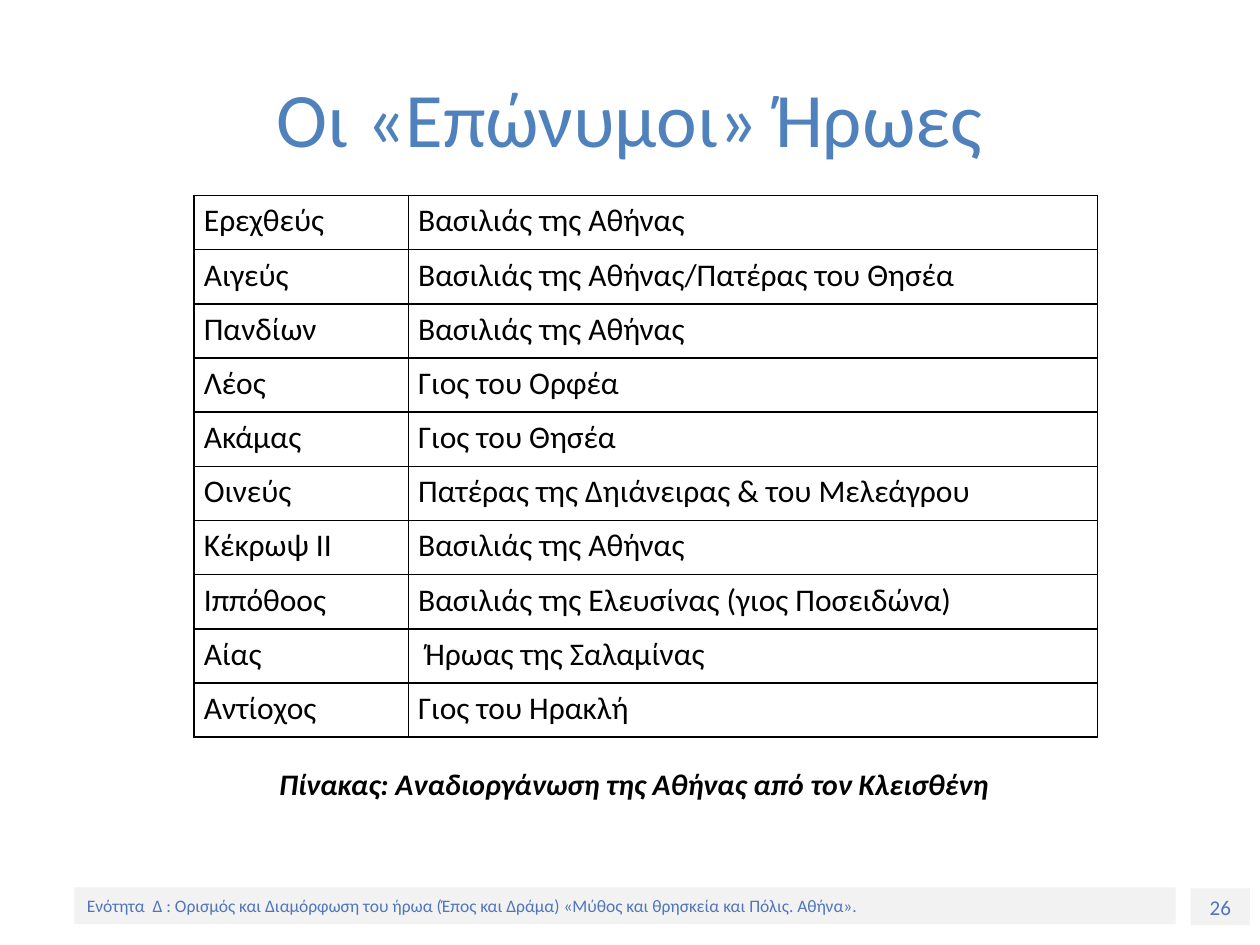
from dataclasses import dataclass

from lxml import etree
from pptx import Presentation
from pptx.dml.color import RGBColor
from pptx.enum.shapes import MSO_SHAPE
from pptx.enum.text import MSO_ANCHOR, PP_ALIGN
from pptx.oxml.ns import qn
from pptx.util import Cm, Pt

RECTANGLE = MSO_SHAPE.RECTANGLE
MIDDLE = MSO_ANCHOR.MIDDLE
LEFT, CENTER = PP_ALIGN.LEFT, PP_ALIGN.CENTER
TITLE_ONLY = 5


@dataclass(frozen=True)
class Theme:
    font: str = "Calibri"
    title_color: str = "4F81BD"
    footer_color: str = "5075BC"
    footer_fill: str = "F2F2F2"
    ink: str = "000000"
    title_size: int = 44
    table_size: int = 18
    caption_size: int = 17
    number_size: int = 12
    footer_size: int = 10
    border_width: int = 1


@dataclass(frozen=True)
class Area:
    left: float
    top: float
    width: float
    height: float

    def lengths(self) -> tuple:
        return Cm(self.left), Cm(self.top), Cm(self.width), Cm(self.height)


@dataclass(frozen=True)
class FooterBar:
    text: str
    area: Area
    size: int
    align: PP_ALIGN


@dataclass(frozen=True)
class Hero:
    name: str
    role: str


THEME = Theme()
KING_OF_ATHENS = "Βασιλιάς της Αθήνας"
HEROES = [
    Hero("Ερεχθεύς", KING_OF_ATHENS),
    Hero("Αιγεύς", "Βασιλιάς της Αθήνας/Πατέρας του Θησέα"),
    Hero("Πανδίων", KING_OF_ATHENS),
    Hero("Λέος", "Γιος του Ορφέα"),
    Hero("Ακάμας", "Γιος του Θησέα"),
    Hero("Οινεύς", "Πατέρας της Δηιάνειρας & του Μελεάγρου"),
    Hero("Κέκρωψ ΙΙ", KING_OF_ATHENS),
    Hero("Ιππόθοος", "Βασιλιάς της Ελευσίνας (γιος Ποσειδώνα)"),
    Hero("Αίας", " Ήρωας της Σαλαμίνας"),
    Hero("Αντίοχος", "Γιος του Ηρακλή"),
]
FOOTER_BARS = [
    FooterBar("26", Area(24, 17.91, 1.2, 0.74), THEME.number_size, CENTER),
    FooterBar(
        "Ενότητα  Δ : Ορισμός και Διαμόρφωση του ήρωα (Έπος και Δράμα) "
        "«Μύθος και θρησκεία και Πόλις. Αθήνα».",
        Area(1.5, 17.89, 22.2, 0.74), THEME.footer_size, LEFT),
]
TITLE_AREA = Area(1.27, 0.76, 22.86, 3.18)
TABLE_AREA = Area(3.91, 3.94, 18.21, 10.92)
CAPTION_AREA = Area(5.38, 15.32, 15.24, 1.27)
NAME_WIDTH = 4.32


def write(frame, text: str, size: int, color: str, align: PP_ALIGN = LEFT,
          emphasis: bool = False) -> None:
    frame.text = text
    para = frame.paragraphs[0]
    para.alignment = align
    for span in para.runs:
        font = span.font
        font.name = THEME.font
        font.size = Pt(size)
        font.color.rgb = RGBColor.from_string(color)
        font.bold = font.italic = emphasis


def add_footer_bar(page, bar: FooterBar) -> None:
    shape = page.shapes.add_shape(RECTANGLE, *bar.area.lengths())
    shape.shadow.inherit = False
    shape.fill.solid()
    shape.fill.fore_color.rgb = RGBColor.from_string(THEME.footer_fill)
    shape.line.fill.background()
    frame = shape.text_frame
    frame.margin_top = frame.margin_bottom = 0
    frame.vertical_anchor = MIDDLE
    write(frame, bar.text, bar.size, THEME.footer_color, bar.align)


def add_borders(cell) -> None:
    properties = cell._tc.get_or_add_tcPr()
    for side in ("a:lnL", "a:lnR", "a:lnT", "a:lnB"):
        line = etree.SubElement(properties, qn(side), w=str(Pt(THEME.border_width)))
        fill = etree.SubElement(line, qn("a:solidFill"))
        etree.SubElement(fill, qn("a:srgbClr"), val=THEME.ink)


def add_hero_table(page) -> None:
    graphic = page.shapes.add_table(len(HEROES), 2, *TABLE_AREA.lengths())
    table = graphic.table
    table.first_row = table.horz_banding = False
    table.columns[0].width = Cm(NAME_WIDTH)
    table.columns[1].width = Cm(TABLE_AREA.width - NAME_WIDTH)
    for row, hero in zip(table.rows, HEROES):
        for cell, text in zip(row.cells, (hero.name, hero.role)):
            cell.margin_left = cell.margin_right = Cm(0.2)
            cell.margin_top = cell.margin_bottom = Cm(0.13)
            write(cell.text_frame, text, THEME.table_size, THEME.ink)
            add_borders(cell)
            cell.fill.background()


def add_caption(page) -> None:
    box = page.shapes.add_textbox(*CAPTION_AREA.lengths())
    box.text_frame.word_wrap = True
    write(box.text_frame, "Πίνακας: Αναδιοργάνωση της Αθήνας από τον Κλεισθένη",
          THEME.caption_size, THEME.ink, emphasis=True)


def set_title(page) -> None:
    title = page.shapes.title
    title.left, title.top, title.width, title.height = TITLE_AREA.lengths()
    title.text_frame.vertical_anchor = MIDDLE
    write(title.text_frame, "Οι «Επώνυμοι» Ήρωες", THEME.title_size,
          THEME.title_color, CENTER)


def main() -> None:
    deck = Presentation()
    deck.slide_width, deck.slide_height = Cm(25.4), Cm(19.05)
    page = deck.slides.add_slide(deck.slide_layouts[TITLE_ONLY])
    set_title(page)
    for bar in FOOTER_BARS:
        add_footer_bar(page, bar)
    add_hero_table(page)
    add_caption(page)
    deck.save("out.pptx")


if __name__ == "__main__":
    main()
